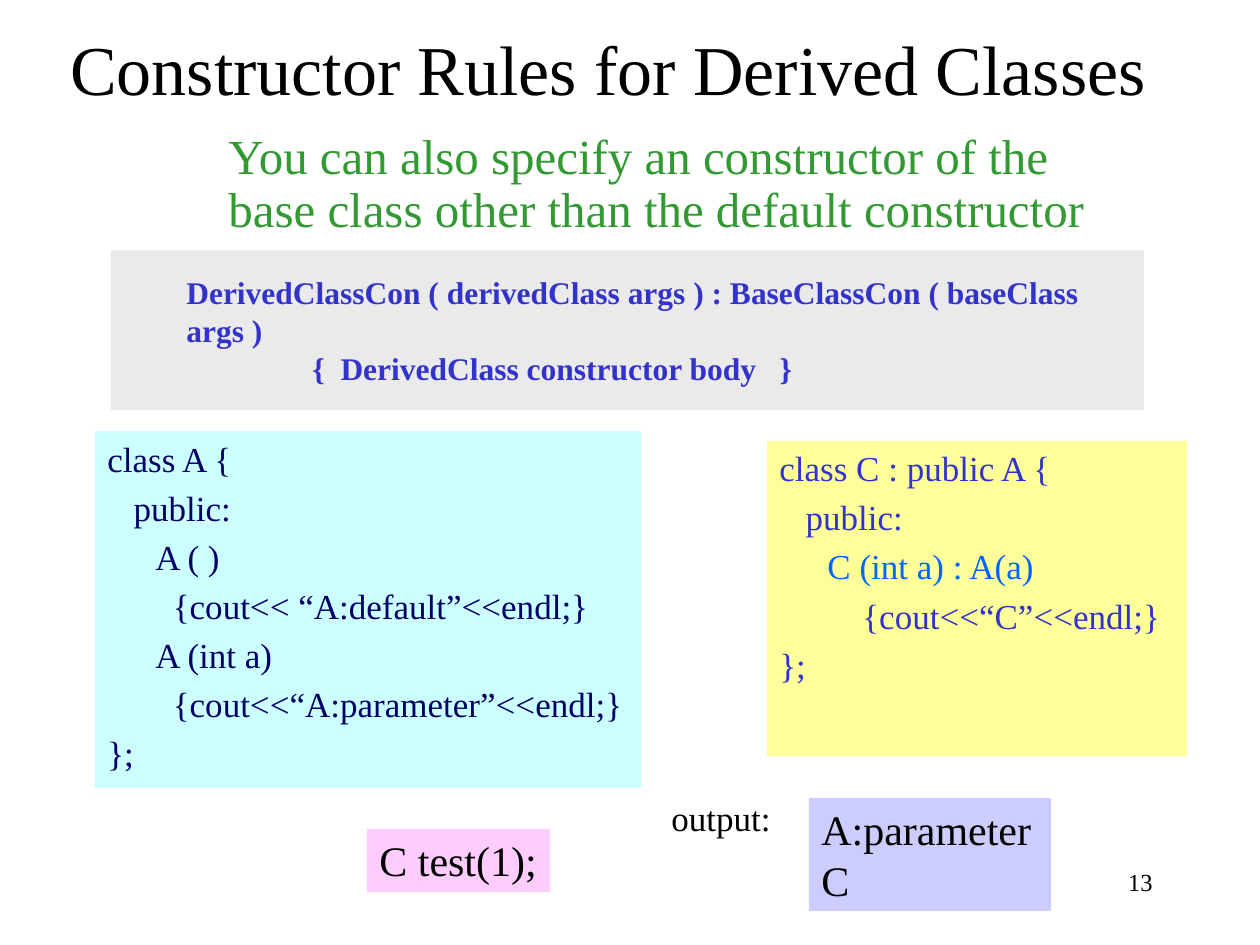
import dataclasses
import pptx
import pptx.dml.color
import pptx.enum.shapes
import pptx.enum.text
import pptx.util

ALIGN = pptx.enum.text.PP_ALIGN
ANCHOR = pptx.enum.text.MSO_ANCHOR


@dataclasses.dataclass(frozen=True)
class Theme:
    """Colours as hex strings and type sizes in points."""
    font: str = "Times New Roman"
    black: str = "000000"
    green: str = "339933"
    navy: str = "000066"
    indigo: str = "3333CC"
    azure: str = "0066FF"
    grey_fill: str = "EAEAEA"
    cyan_fill: str = "CCFFFF"
    yellow_fill: str = "FFFF99"
    pink_fill: str = "FFCCFF"
    lilac_fill: str = "CCCCFF"
    title: int = 40
    lead: int = 28
    result: int = 24
    code: int = 20
    syntax: int = 18
    number: int = 14


THEME = Theme()
CODE_INDENT = 48


def px(length):
    """Turn pixels into EMU."""
    return pptx.util.Emu(round(length * 914400 / 126))


def rgb(colour):
    """Turn a hex string into a colour."""
    return pptx.dml.color.RGBColor.from_string(colour)


def add_frame(page, box, fill=None, wrap=True, anchor=ANCHOR.TOP, top_inset=6):
    """Add a text box, or a filled rectangle, and return its text frame."""
    place = [px(length) for length in box]
    if fill:
        shape = page.shapes.add_shape(pptx.enum.shapes.MSO_SHAPE.RECTANGLE, *place)
        shape.shadow.inherit = False
        shape.fill.solid()
        shape.fill.fore_color.rgb = rgb(fill)
        shape.line.fill.background()
    else:
        shape = page.shapes.add_textbox(*place)
    frame = shape.text_frame
    frame.word_wrap = wrap
    frame.vertical_anchor = anchor
    frame.margin_left = frame.margin_right = pptx.util.Inches(0.1)
    frame.margin_top = px(top_inset)
    frame.margin_bottom = px(6)
    return frame


def add_line(frame, text, size, colour, indent=0, before=0, bold=False, align=ALIGN.LEFT):
    """Write one paragraph, using the first empty one if it is free."""
    first = frame.paragraphs[0]
    fresh = not first.runs
    para = first if fresh else frame.add_paragraph()
    para.alignment = align
    if indent:
        para._p.get_or_add_pPr().set("marL", str(px(indent)))
    if before and not fresh:
        para.space_before = pptx.util.Pt(before)
    span = para.add_run()
    span.text = text
    span.font.name = THEME.font
    span.font.size = pptx.util.Pt(size)
    span.font.bold = bold
    span.font.color.rgb = rgb(colour)
    return para


def add_title(page, box):
    """Place the slide title."""
    frame = add_frame(page, box, anchor=ANCHOR.BOTTOM)
    add_line(frame, "Constructor Rules for Derived Classes ",
             THEME.title, THEME.black, align=ALIGN.CENTER)


def add_lead(page, box):
    """Place the green introduction."""
    frame = add_frame(page, box)
    para = add_line(
        frame,
        "You can also specify an constructor of the base class other than the default constructor",
        THEME.lead, THEME.green, indent=CODE_INDENT)
    para.line_spacing = 0.9


def add_syntax(page, box):
    """Place the general form of a derived constructor."""
    frame = add_frame(page, box, THEME.grey_fill, top_inset=23)
    lines = [("DerivedClassCon ( derivedClass args ) : BaseClassCon ( baseClass args )", 63),
             ("{  DerivedClass constructor body   }", 189)]
    for text, indent in lines:
        add_line(frame, text, THEME.syntax, THEME.indigo, indent, bold=True)


def add_code(page, box, fill, lines):
    """Place a class listing from (text, colour, indent) lines."""
    frame = add_frame(page, box, fill)
    for text, colour, indent in lines:
        add_line(frame, text, THEME.code, colour, indent, before=4)


def add_result(page, box, fill, lines, wrap):
    """Place a filled box with the test call or its output."""
    frame = add_frame(page, box, fill, wrap)
    for text in lines:
        add_line(frame, text, THEME.result, THEME.black)


def add_label(page, box, text, size, align, wrap):
    """Place a plain one-line label."""
    add_line(add_frame(page, box, wrap=wrap), text, size, THEME.black, align=align)


def main():
    """Build the slide and save it."""
    deck = pptx.Presentation()
    deck.slide_width, deck.slide_height = px(1260), px(945)
    page = deck.slides.add_slide(deck.slide_layouts[6])
    base_class = [
        ("class A {", THEME.navy, 0),
        ("   public:", THEME.navy, 0),
        ("A ( )", THEME.navy, CODE_INDENT),
        ("  {cout<< “A:default”<<endl;}", THEME.navy, CODE_INDENT),
        ("A (int a)", THEME.navy, CODE_INDENT),
        ("  {cout<<“A:parameter”<<endl;}", THEME.navy, CODE_INDENT),
        ("};", THEME.navy, 0),
    ]
    derived_class = [
        ("class C : public A {", THEME.indigo, 0),
        ("   public:", THEME.indigo, 0),
        ("C (int a) : A(a)", THEME.azure, CODE_INDENT),
        ("    {cout<<“C”<<endl;}", THEME.indigo, CODE_INDENT),
        ("};", THEME.indigo, 0),
    ]
    add_label(page, (903, 861, 262, 63), "13", THEME.number, ALIGN.RIGHT, True)
    add_title(page, (0, 21, 1234, 95))
    add_lead(page, (168, 126, 935, 126))
    add_code(page, (95, 431, 546, 357), THEME.cyan_fill, base_class)
    add_code(page, (767, 441, 420, 315), THEME.yellow_fill, derived_class)
    add_result(page, (367, 829, 183, 63), THEME.pink_fill, ["C test(1);"], False)
    add_result(page, (809, 798, 242, 113), THEME.lilac_fill, ["A:parameter", "C"], True)
    add_label(page, (659, 790, 125, 54), "output:", THEME.code, ALIGN.LEFT, False)
    add_syntax(page, (111, 250, 1033, 160))
    deck.save("out.pptx")


if __name__ == "__main__":
    main()
